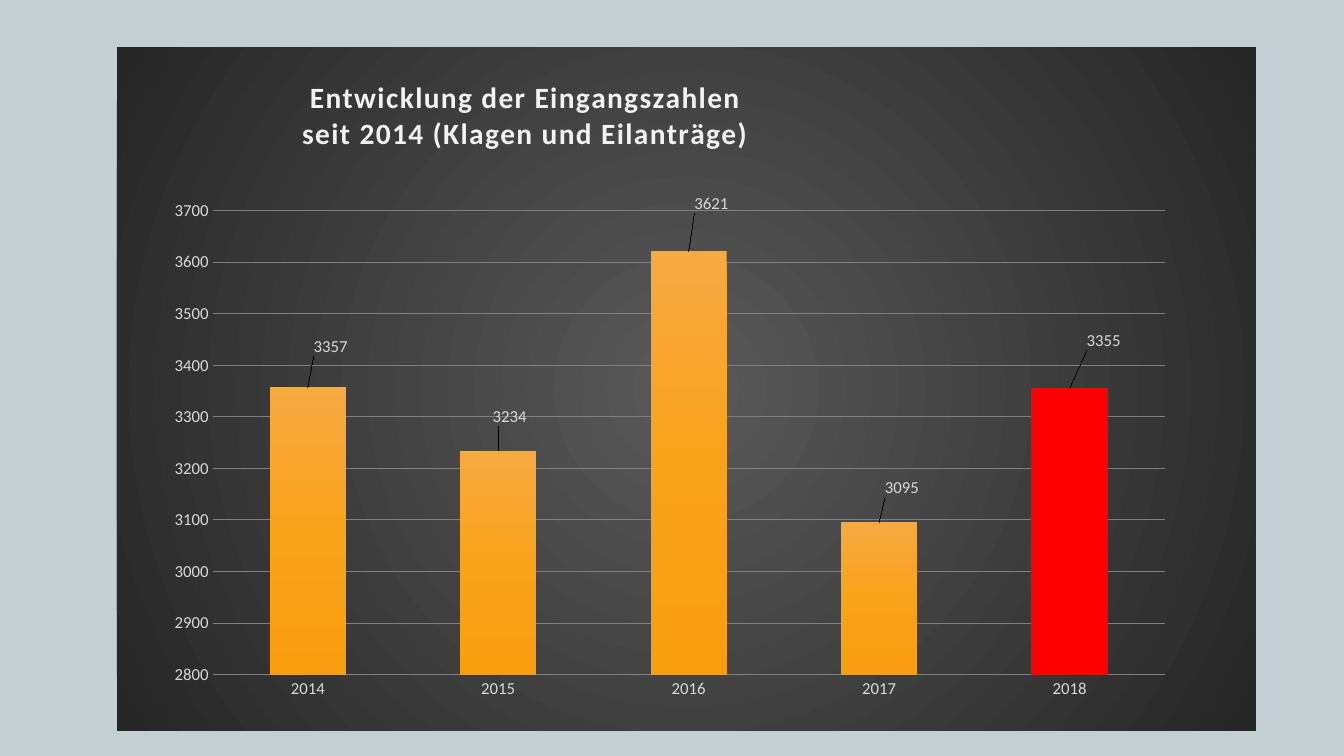
"""Build a slide with a column chart of incoming court cases from 2014 to 2018."""
from lxml.etree import fromstring
from pptx import Presentation
from pptx.chart.data import CategoryChartData
from pptx.dml.color import RGBColor
from pptx.enum.chart import XL_CHART_TYPE, XL_LABEL_POSITION, XL_TICK_MARK
from pptx.oxml import parse_xml
from pptx.oxml.ns import nsdecls
from pptx.util import Pt

COLORS = {
    "background": "C3CFD3",
    "panel_center": "595959",
    "panel_edge": "262626",
    "bar_top": "F7A942",
    "bar_middle": "F9A31A",
    "bar_bottom": "F99E0F",
    "highlight": "FF0000",
    "title": "F2F2F2",
    "label": "D9D9D9",
    "grid": "808080",
}
FONT = "Calibri"
CASES = {"2014": 3357, "2015": 3234, "2016": 3621, "2017": 3095, "2018": 3355}
LABEL_SHIFTS = [(0.02, -0.04), (0.01, -0.03), (0.02, -0.05), (0.02, -0.03), (0.03, -0.05)]


def gradient_properties(stops, direction):
    """Return chart shape properties with a gradient fill and no line."""
    stop_xml = "".join(
        f'<a:gs pos="{percent * 1000}"><a:srgbClr val="{COLORS[name]}"/></a:gs>'
        for percent, name in stops
    )
    return parse_xml(
        f'<c:spPr {nsdecls("c", "a")}><a:gradFill rotWithShape="1"><a:gsLst>{stop_xml}</a:gsLst>'
        f"{direction}</a:gradFill><a:ln><a:noFill/></a:ln></c:spPr>"
    )


def manual_layout(settings):
    """Return a manual chart layout with the given settings in schema order."""
    values = "".join(f'<c:{key} val="{value}"/>' for key, value in settings.items())
    return parse_xml(
        f'<c:layout {nsdecls("c")}><c:manualLayout>{values}</c:manualLayout></c:layout>'
    )


presentation = Presentation()
presentation.slide_width = Pt(960)
presentation.slide_height = Pt(540)
slide = presentation.slides.add_slide(presentation.slide_layouts[6])
slide.background.fill.solid()
slide.background.fill.fore_color.rgb = RGBColor.from_string(COLORS["background"])

case_data = CategoryChartData()
case_data.categories = list(CASES)
case_data.add_series("Series 1", list(CASES.values()))
chart = slide.shapes.add_chart(
    XL_CHART_TYPE.COLUMN_CLUSTERED, Pt(83.5), Pt(33.8), Pt(813.6), Pt(488.2), case_data
).chart
chart.has_legend = False
chart.font.name = FONT
chart.font.size = Pt(10)
chart.element.find("{*}chart").addnext(gradient_properties(
    [(0, "panel_center"), (100, "panel_edge")],
    '<a:path path="circle"><a:fillToRect l="50000" t="50000" r="50000" b="50000"/></a:path>',
))

headline = chart.chart_title
headline.text_frame.text = "Entwicklung der Eingangszahlen\nseit 2014 (Klagen und Eilanträge)"
for paragraph in headline.text_frame.paragraphs:
    for run in paragraph.runs:
        run.font.name = FONT
        run.font.size = Pt(21)
        run.font.bold = True
        run.font.color.rgb = RGBColor.from_string(COLORS["title"])
        run.font._element.set("spc", "100")
headline.include_in_layout = False
title_element = chart.element.find(".//{*}title")
for automatic_layout in title_element.findall("{*}layout"):
    title_element.remove(automatic_layout)
title_element.find("{*}tx").addnext(
    manual_layout({"xMode": "edge", "yMode": "edge", "x": 0.16, "y": 0.04})
)

plot_area = chart.element.find(".//{*}plotArea")
for automatic_layout in plot_area.findall("{*}layout"):
    plot_area.remove(automatic_layout)
plot_area.insert(0, manual_layout({
    "layoutTarget": "inner", "xMode": "edge", "yMode": "edge",
    "x": 0.084, "y": 0.239, "w": 0.836, "h": 0.679,
}))

for axis in (chart.category_axis, chart.value_axis):
    axis.major_tick_mark = XL_TICK_MARK.NONE
    axis.minor_tick_mark = XL_TICK_MARK.NONE
    axis.format.line.fill.background()
    axis.tick_labels.font.name = FONT
    axis.tick_labels.font.size = Pt(12)
    axis.tick_labels.font.color.rgb = RGBColor.from_string(COLORS["label"])
chart.value_axis.minimum_scale = 2800
chart.value_axis.maximum_scale = 3700
chart.value_axis.major_unit = 100
gridline = chart.value_axis.major_gridlines.format.line
gridline.width = Pt(0.75)
gridline.color.rgb = RGBColor.from_string(COLORS["grid"])

plot = chart.plots[0]
plot.gap_width = 150
plot.vary_by_categories = False
yearly_cases = plot.series[0]
yearly_cases._element.find("{*}tx").addnext(gradient_properties(
    [(0, "bar_top"), (50, "bar_middle"), (100, "bar_bottom")],
    '<a:lin ang="5400000" scaled="0"/>',
))
highlight = yearly_cases.points[4].format.fill
highlight.solid()
highlight.fore_color.rgb = RGBColor.from_string(COLORS["highlight"])

yearly_cases.data_labels.show_value = True
for index, (shift_x, shift_y) in enumerate(LABEL_SHIFTS):
    case_label = yearly_cases.points[index].data_label
    case_label.position = XL_LABEL_POSITION.OUTSIDE_END
    case_label.font.name = FONT
    case_label.font.size = Pt(12)
    case_label.font.color.rgb = RGBColor.from_string(COLORS["label"])
for label_element, (shift_x, shift_y) in zip(
    yearly_cases._element.findall(".//{*}dLbl"), LABEL_SHIFTS
):
    label_element.find("{*}idx").addnext(manual_layout({"x": shift_x, "y": shift_y}))

presentation.save("out.pptx")
